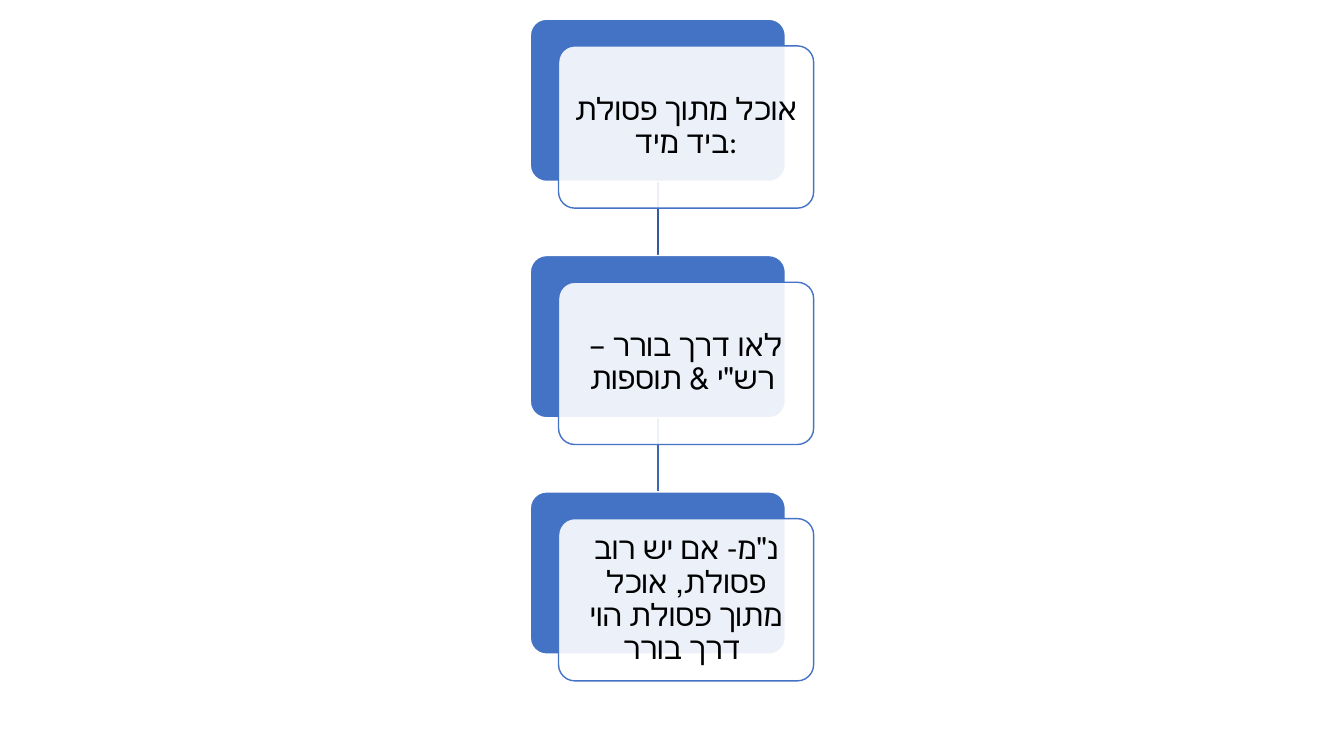
from dataclasses import dataclass

from lxml.etree import SubElement as Sub
from pptx import Presentation
from pptx.dml.color import RGBColor as RGB
from pptx.enum.shapes import MSO_SHAPE as Shape
from pptx.enum.text import MSO_ANCHOR as Anchor, PP_ALIGN as Align
from pptx.oxml.ns import qn
from pptx.util import Inches, Pt

STEPS = [
    "אוכל מתוך פסולת ביד מיד:",
    "לאו דרך בורר – רש\"י & תוספות ",
    "נ\"מ- אם יש רוב פסולת, אוכל מתוך פסולת הוי דרך בורר ",
]
LINKS = ["365B9D", "3E67B2"]


@dataclass(frozen=True)
class Theme:
    blue: str = "4472C4"
    white: str = "FFFFFF"
    ink: str = "000000"
    font: str = "Calibri"
    size: int = 22
    line: int = 1
    opaque: int = 90


THEME = Theme()
WIDE, HIGH = 13.33, 7.5
LEFT, TOP = 5.26, 0.19
CARD_W, CARD_H = 2.53, 1.61
PITCH = 2.345
SHIFT_X, SHIFT_Y = 0.28, 0.265
INSET, PAD = 0.05, 0.09
LINK_W = 0.1


def set_line(shape, color):
    shape.shadow.inherit = False
    shape.line.color.rgb = RGB.from_string(color)
    shape.line.width = Pt(THEME.line)


def add_card(slide, x, y, fill, edge):
    card = slide.shapes.add_shape(
        Shape.ROUNDED_RECTANGLE, Inches(x), Inches(y), Inches(CARD_W), Inches(CARD_H))
    card.adjustments[0] = 0.1
    card.fill.solid()
    card.fill.fore_color.rgb = RGB.from_string(fill)
    set_line(card, edge)
    return card


def fade(card):
    """Let what lies behind the card show through its fill."""
    color = card._element.spPr.find(qn("a:solidFill"))[0]
    Sub(color, qn("a:alpha"), val=str(THEME.opaque * 1000))


def add_text(slide, x, y, text):
    box = slide.shapes.add_textbox(
        Inches(x + INSET), Inches(y + INSET),
        Inches(CARD_W - 2 * INSET), Inches(CARD_H - 2 * INSET))
    frame = box.text_frame
    frame.word_wrap = True
    frame.vertical_anchor = Anchor.MIDDLE
    frame.margin_left = frame.margin_right = Inches(PAD)
    frame.margin_top = frame.margin_bottom = Inches(PAD)
    para = frame.paragraphs[0]
    para.text = text
    para.alignment = Align.CENTER
    para.line_spacing = 0.9
    para.space_after = Pt(0.35 * THEME.size)
    para.font.size = Pt(THEME.size)
    para.font.name = THEME.font
    para.font.color.rgb = RGB.from_string(THEME.ink)


def add_link(slide, row, color):
    """Draw a line down the middle of a narrow frame, from one row to the next."""
    mid, y = LEFT + CARD_W / 2, TOP + row * PITCH
    top, end = Inches(y + CARD_H), Inches(y + PITCH)
    left, right = Inches(mid - LINK_W / 2), Inches(mid + LINK_W / 2)
    pen = slide.shapes.build_freeform(left, top)
    pen.move_to(Inches(mid), top)
    pen.add_line_segments([(Inches(mid), end)], close=False)
    pen.move_to(right, end)
    link = pen.convert_to_shape()
    link.fill.background()
    set_line(link, color)


def main():
    deck = Presentation()
    deck.slide_width, deck.slide_height = Inches(WIDE), Inches(HIGH)
    slide = deck.slides.add_slide(deck.slide_layouts[6])
    for row, color in reversed(list(enumerate(LINKS))):
        add_link(slide, row, color)
    for row, text in enumerate(STEPS):
        y = TOP + row * PITCH
        add_card(slide, LEFT, y, THEME.blue, THEME.white)
        front_x, front_y = LEFT + SHIFT_X, y + SHIFT_Y
        fade(add_card(slide, front_x, front_y, THEME.white, THEME.blue))
        add_text(slide, front_x, front_y, text)
    deck.save("out.pptx")


if __name__ == "__main__":
    main()
